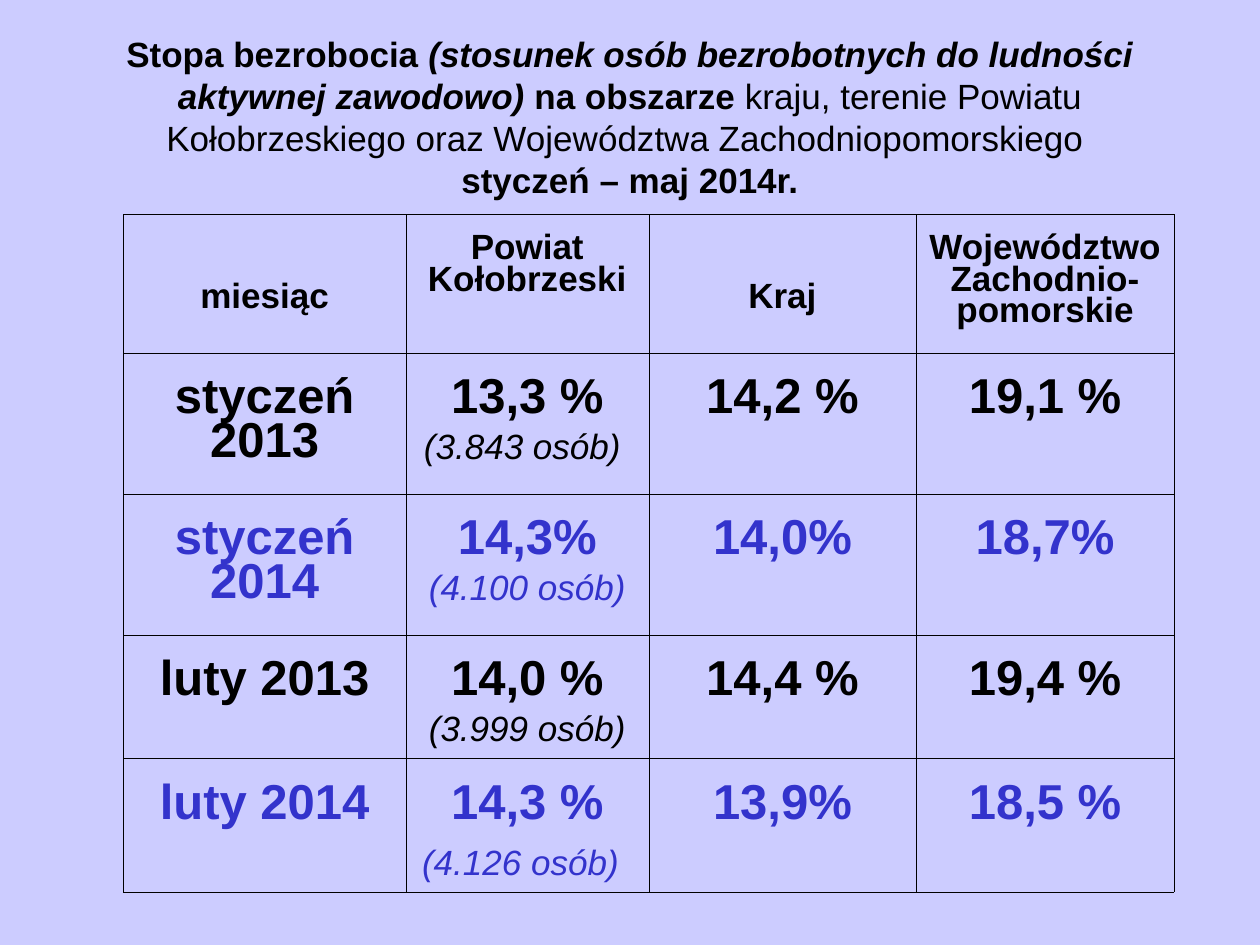
from typing import NamedTuple

from lxml.etree import SubElement
from pptx import Presentation
from pptx.dml.color import RGBColor
from pptx.enum.text import MSO_ANCHOR, MSO_AUTO_SIZE, PP_ALIGN
from pptx.oxml.ns import qn
from pptx.util import Inches, Pt

BLACK, BLUE, LAVENDER = "000000", "3333CC", "CCCCFF"
FONT = "Arial"
SMALL, LARGE = 20, 28
HAIRLINE, FRAME = 0.11, 0.23  # points
COLUMNS = (2.24, 1.93, 2.12, 2.05)
ROWS = (1.1, 1.12, 1.12, 0.98, 1.06)


class Span(NamedTuple):
    text: str
    size: float = LARGE
    bold: bool = True
    italic: bool = False


class Month(NamedTuple):
    name: str
    county: str
    people: tuple[Span, ...]
    country: str
    region: str
    color: str


def note(text: str) -> Span:
    return Span(text, SMALL, False, True)


TITLE = (
    Span("Stopa bezrobocia ", SMALL),
    Span("(stosunek osób bezrobotnych do ludności aktywnej zawodowo)", SMALL, italic=True),
    Span(" na obszarze ", SMALL),
    Span("kraju, terenie Powiatu Kołobrzeskiego oraz Województwa Zachodniopomorskiego ",
         SMALL, False),
    Span("styczeń – maj 2014r.", SMALL),
)
# Heading text and top margin: the one-line headings sit a line lower
HEADINGS = (
    ("miesiąc", 0.55),
    ("Powiat Kołobrzeski", 0.16),
    ("Kraj", 0.55),
    ("Województwo Zachodnio-pomorskie", 0.16),
)
MONTHS = (
    Month("styczeń 2013", "13,3 %", (note("(3.843 osób) "),), "14,2 %", "19,1 %", BLACK),
    Month("styczeń 2014", "14,3%", (note("(4.100 osób)"),), "14,0%", "18,7%", BLUE),
    Month("luty 2013", "14,0 %", (note("(3.999 osób)"),), "14,4 %", "19,4 %", BLACK),
    Month("luty 2014", "14,3 %", (note("(4.126 osób)"), Span(" ", LARGE, False)),
          "13,9%", "18,5 %", BLUE),
)


def rgb(color: str) -> RGBColor:
    return RGBColor.from_string(color)


def add_span(para, span: Span) -> None:
    run = para.add_run()
    run.text = span.text
    run.font.size = Pt(span.size)
    run.font.bold = span.bold
    run.font.italic = span.italic


def format_para(para, color: str) -> None:
    para.alignment = PP_ALIGN.CENTER
    para.font.name = FONT
    para.font.color.rgb = rgb(color)


def set_borders(cell, row: int, column: int) -> None:
    """Hairlines inside the table, a slightly wider line round it."""
    outer = {
        "a:lnL": column == 0,
        "a:lnR": column == len(COLUMNS) - 1,
        "a:lnT": row == 0,
        "a:lnB": row == len(ROWS) - 1,
    }
    properties = cell._tc.get_or_add_tcPr()
    for tag, is_outer in outer.items():
        width = Pt(FRAME if is_outer else HAIRLINE)
        line = SubElement(properties, qn(tag), w=str(width))
        fill = SubElement(line, qn("a:solidFill"))
        SubElement(fill, qn("a:srgbClr"), val=BLACK)


def fill_cell(cell, lines: list[tuple[Span, ...]], color: str, top: float, before: float) -> None:
    cell.margin_left = cell.margin_right = Inches(0.1)
    cell.margin_top, cell.margin_bottom = Inches(top), Inches(0.05)
    cell.fill.background()
    frame = cell.text_frame
    for index, spans in enumerate(lines):
        para = frame.add_paragraph() if index else frame.paragraphs[0]
        format_para(para, color)
        para.line_spacing = 0.81
        para.space_before = Pt(before)
        for span in spans:
            add_span(para, span)


def add_title(page) -> None:
    title = page.shapes.title
    title.left, title.top = Inches(0.5), Inches(0.3)
    title.width, title.height = Inches(9), Inches(1.25)
    frame = title.text_frame
    frame.word_wrap = True
    frame.auto_size = MSO_AUTO_SIZE.NONE
    frame.vertical_anchor = MSO_ANCHOR.MIDDLE
    para = frame.paragraphs[0]
    format_para(para, BLACK)
    *opening, period = TITLE
    for span in opening:
        add_span(para, span)
    para.add_line_break()
    add_span(para, period)


def add_rates(page) -> None:
    table = page.shapes.add_table(
        len(ROWS), len(COLUMNS), Inches(0.98), Inches(1.7),
        Inches(sum(COLUMNS)), Inches(sum(ROWS))).table
    table.first_row = table.horz_banding = False
    for column, width in zip(table.columns, COLUMNS):
        column.width = Inches(width)
    for row, height in zip(table.rows, ROWS):
        row.height = Inches(height)
    for row in range(len(ROWS)):
        for column in range(len(COLUMNS)):
            set_borders(table.cell(row, column), row, column)
    for column, (text, top) in enumerate(HEADINGS):
        fill_cell(table.cell(0, column), [(Span(text, SMALL),)], BLACK, top, 5)
    for row, month in enumerate(MONTHS, start=1):
        values = (month.name, month.county, month.country, month.region)
        for column, value in enumerate(values):
            lines = [(Span(value),)]
            if value is month.county and column == 1:
                lines.append(month.people)
            fill_cell(table.cell(row, column), lines, month.color, 0.2, 7)


def main() -> None:
    deck = Presentation()
    deck.slide_width, deck.slide_height = Inches(10), Inches(7.5)
    page = deck.slides.add_slide(deck.slide_layouts.get_by_name("Title Only"))
    page.background.fill.solid()
    page.background.fill.fore_color.rgb = rgb(LAVENDER)
    add_title(page)
    add_rates(page)
    deck.save("out.pptx")


if __name__ == "__main__":
    main()
